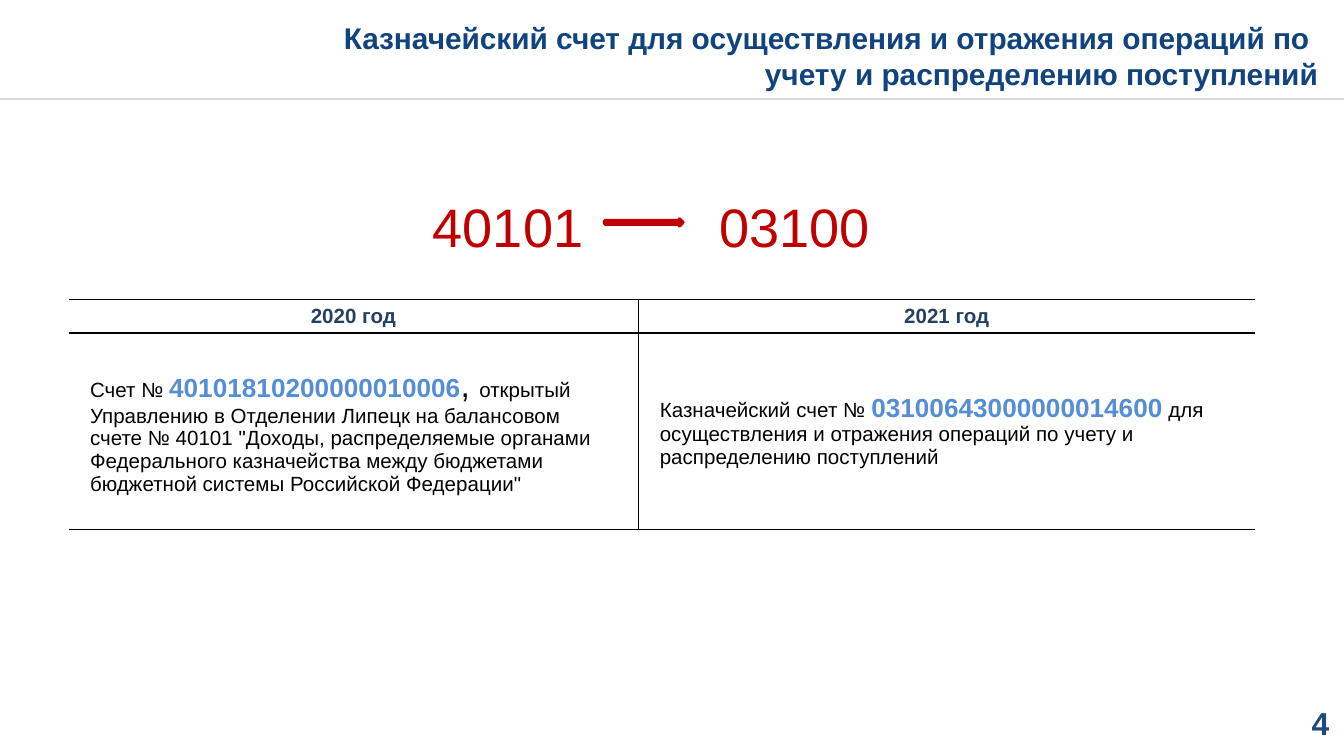
from lxml import etree
from pptx import Presentation
from pptx import util as u
from pptx.dml.color import RGBColor
from pptx.enum import shapes, text
from pptx.oxml.ns import qn

COLORS = {
    "title": "11437F", "number": "1F497D", "header": "254061", "account": "558ED5",
    "accent": "C00000", "body": "000000", "rule": "D9D9D9",
}
BORDERS = {"left": "a:lnL", "right": "a:lnR", "top": "a:lnT", "bottom": "a:lnB"}


def rgb(name):
    return RGBColor.from_string(COLORS[name])


def add_run(paragraph, words, size=11, color="body", bold=False, font="Arial"):
    run = paragraph.add_run()
    run.text = words
    run.font.name = font
    run.font.size = u.Pt(size)
    run.font.bold = bold
    run.font.color.rgb = rgb(color)


class AccountSlide:
    def __init__(self, deck):
        self.slide = deck.slides.add_slide(deck.slide_layouts[6])

    def rule(self, y, width):
        divider = self.slide.shapes.add_connector(
            shapes.MSO_CONNECTOR.STRAIGHT, 0, u.Inches(y), u.Inches(width), u.Inches(y))
        divider.line.color.rgb = rgb("rule")
        divider.line.width = u.Pt(1)
        etree.SubElement(divider._element.spPr, qn("a:effectLst"))

    def label(self, box, lines, align=text.PP_ALIGN.LEFT, tab=None, **style):
        frame = self.slide.shapes.add_textbox(*map(u.Inches, box)).text_frame
        frame.word_wrap = True
        frame.margin_left = frame.margin_right = frame.margin_top = frame.margin_bottom = 0
        for index, line in enumerate(lines):
            paragraph = frame.add_paragraph() if index else frame.paragraphs[0]
            if tab:
                tabs = etree.SubElement(paragraph._p.get_or_add_pPr(), qn("a:tabLst"))
                etree.SubElement(tabs, qn("a:tab"), pos=str(u.Inches(tab)), algn="l")
            paragraph.alignment = align
            add_run(paragraph, line, **style)

    def arrow(self, box):
        arrow = self.slide.shapes.add_shape(
            shapes.MSO_SHAPE.RIGHT_ARROW, *map(u.Inches, box))
        arrow.shadow.inherit = False
        arrow.fill.solid()
        arrow.fill.fore_color.rgb = rgb("accent")
        arrow.line.color.rgb = rgb("accent")
        arrow.line.width = u.Pt(2)

    def borders(self, cell, visible):
        properties = cell._tc.get_or_add_tcPr()
        for side, tag in BORDERS.items():
            edge = etree.SubElement(properties, qn(tag), w=str(u.Pt(1)))
            if side in visible:
                fill = etree.SubElement(edge, qn("a:solidFill"))
                etree.SubElement(fill, qn("a:srgbClr"), val=COLORS["body"])
            else:
                etree.SubElement(edge, qn("a:noFill"))

    def cell(self, cell, runs, align, margins, inner_side):
        cell.margin_left = cell.margin_right = u.Inches(margins[0])
        cell.margin_top = cell.margin_bottom = u.Inches(margins[1])
        cell.vertical_anchor = text.MSO_ANCHOR.MIDDLE
        paragraph = cell.text_frame.paragraphs[0]
        paragraph.alignment = align
        for words, style in runs:
            add_run(paragraph, words, **style)
        self.borders(cell, ("top", "bottom", inner_side))
        cell.fill.background()

    def table(self, left, top, widths, heights, rows):
        grid = self.slide.shapes.add_table(
            len(heights), len(widths), u.Inches(left), u.Inches(top),
            u.Inches(sum(widths)), u.Inches(sum(heights))).table
        grid.first_row = grid.horz_banding = False
        for column, width in zip(grid.columns, widths):
            column.width = u.Inches(width)
        for row, height in zip(grid.rows, heights):
            row.height = u.Inches(height)
        formats = [(text.PP_ALIGN.CENTER, (0.1, 0.03)), (text.PP_ALIGN.LEFT, (0.16, 0.08))]
        for r, (row, (align, margins)) in enumerate(zip(rows, formats)):
            for c, runs in enumerate(row):
                self.cell(grid.cell(r, c), runs, align, margins, ("right", "left")[c])


def main():
    deck = Presentation()
    deck.slide_width, deck.slide_height = u.Inches(10), u.Inches(10 * 9 / 16)
    page = AccountSlide(deck)
    right = text.PP_ALIGN.RIGHT

    page.rule(0.74, 10)
    page.label((7.59, 5.24, 2.3, 0.29), ["4"], right, size=17, color="number", bold=True)

    heading = {"color": "header", "bold": True}
    account = {"size": 14, "color": "account", "bold": True}
    rows = [
        [[("2020 год", heading)], [("2021 год", heading)]],
        [
            [("Счет № ", {}), ("40101810200000010006", account), (", ", {"size": 18}),
             ("открытый Управлению в Отделении Липецк на балансовом счете № 40101 "
              "\"Доходы, распределяемые органами Федерального казначейства между "
              "бюджетами бюджетной системы Российской Федерации\"", {})],
            [("Казначейский счет № ", {}), ("03100643000000014600", account),
             (" для осуществления и отражения операций по учету и распределению "
              "поступлений", {})],
        ],
    ]
    page.table(0.51, 2.23, (4.24, 4.59), (0.25, 1.46), rows)

    page.label((2.48, 0.15, 7.33, 0.54),
               ["Казначейский счет для осуществления и отражения операций по ",
                "учету и распределению поступлений"],
               right, size=16, color="title", bold=True)
    page.label((3.22, 1.44, 3.38, 0.48), ["40101\t03100"], tab=2.13,
               size=29, color="accent")
    page.arrow((4.5, 1.63, 0.58, 0.05))

    deck.save("out.pptx")


if __name__ == "__main__":
    main()
